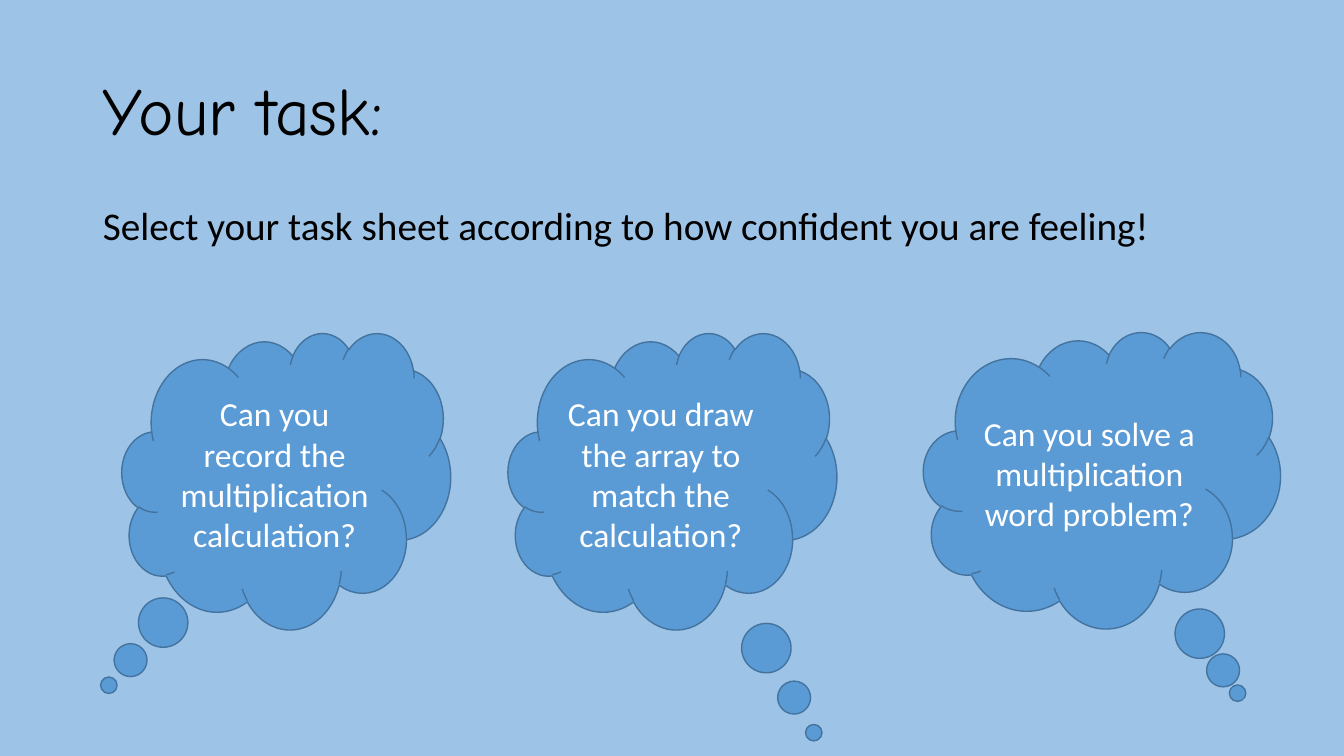
from pptx import Presentation
from pptx.dml.color import RGBColor
from pptx.enum.shapes import MSO_SHAPE as Shape
from pptx.enum.text import MSO_ANCHOR as Anchor, MSO_AUTO_SIZE as AutoSize, PP_ALIGN as Align
from pptx.oxml.ns import qn
from pptx.util import Inches, Pt
from lxml import etree

SKY = RGBColor(0x9D, 0xC3, 0xE6)
CLOUD = RGBColor(0x5B, 0x9B, 0xD5)
OUTLINE = RGBColor(0x43, 0x73, 0x9E)
BLACK = RGBColor(0, 0, 0)
WHITE = RGBColor(0xFF, 0xFF, 0xFF)

CLOUDS = [
    ("Can you record the multiplication calculation?", (1.21, 3.3, 3.26, 2.94), (-0.54, 0.69)),
    ("Can you draw the array to match the calculation?", (5.04, 3.3, 3.26, 2.94), (0.43, 0.85)),
    ("Can you solve a multiplication word problem?", (9.16, 3.29, 3.54, 2.94), (0.38, 0.72)),
]


def write_text(shape, text, font, size, color, align, anchor):
    frame = shape.text_frame
    frame.word_wrap = True
    frame.auto_size = AutoSize.NONE
    frame.vertical_anchor = anchor
    paragraph = frame.paragraphs[0]
    paragraph.alignment = align
    run = paragraph.add_run()
    run.text = text
    run.font.name = font
    run.font.size = Pt(size)
    run.font.color.rgb = color
    return paragraph


def place(shape, box):
    shape.left, shape.top, shape.width, shape.height = (Inches(length) for length in box)


def add_title(slide, box):
    title = slide.shapes.title
    place(title, box)
    paragraph = write_text(title, "Your task:", "Comic Neue", 48, BLACK, Align.LEFT, Anchor.MIDDLE)
    paragraph.line_spacing = 0.9


def add_instruction(slide, box):
    body = slide.placeholders[1]
    place(body, box)
    text = "Select your task sheet according to how confident you are feeling!"
    paragraph = write_text(body, text, "Calibri", 28, BLACK, Align.LEFT, Anchor.TOP)
    paragraph.line_spacing = 0.9
    paragraph.space_before = Pt(10)
    properties = paragraph._p.get_or_add_pPr()
    properties.set("marL", "0")
    properties.set("indent", "0")
    etree.SubElement(properties, qn("a:buNone"))


def add_cloud(slide, text, box, tail):
    cloud = slide.shapes.add_shape(Shape.CLOUD_CALLOUT, *(Inches(length) for length in box))
    cloud.adjustments[0], cloud.adjustments[1] = tail
    cloud.shadow.inherit = False
    cloud.fill.solid()
    cloud.fill.fore_color.rgb = CLOUD
    cloud.line.color.rgb = OUTLINE
    cloud.line.width = Pt(1)
    write_text(cloud, text, "Calibri", 24, WHITE, Align.CENTER, Anchor.MIDDLE)


def build_task_slide(presentation):
    slide = presentation.slides.add_slide(presentation.slide_layouts[1])
    slide.background.fill.solid()
    slide.background.fill.fore_color.rgb = SKY
    add_title(slide, (0.92, 0.4, 11.5, 1.45))
    add_instruction(slide, (0.92, 2, 11.5, 4.76))
    for text, box, tail in CLOUDS:
        add_cloud(slide, text, box, tail)


def main():
    presentation = Presentation()
    presentation.slide_width = Inches(13.33)
    presentation.slide_height = Inches(7.5)
    build_task_slide(presentation)
    presentation.save("out.pptx")


if __name__ == "__main__":
    main()
